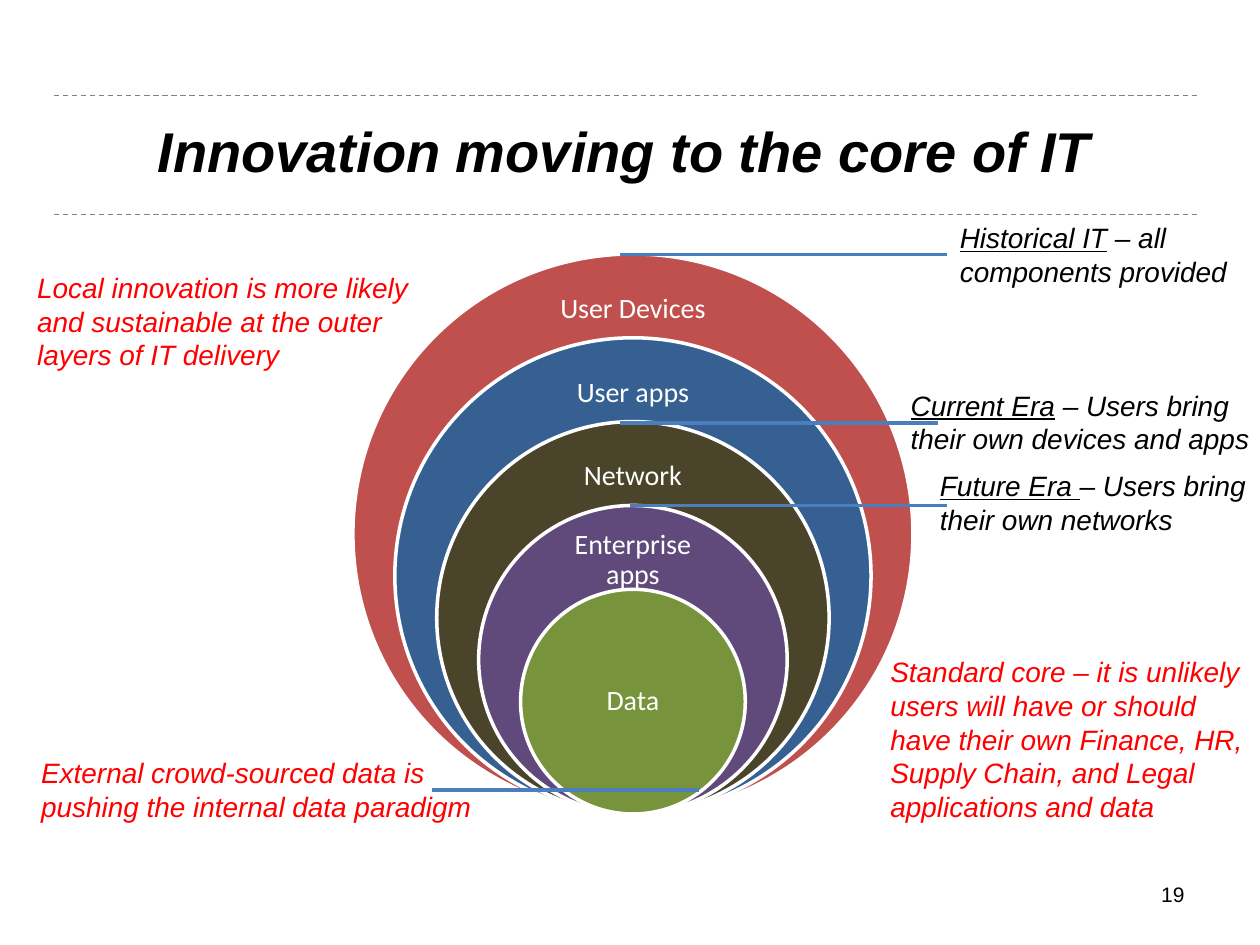
from lxml import etree
from pptx import Presentation
from pptx.dml.color import RGBColor
from pptx.enum.dml import MSO_LINE
from pptx.enum.shapes import MSO_CONNECTOR, MSO_SHAPE
from pptx.enum.text import MSO_ANCHOR, MSO_AUTO_SIZE, PP_ALIGN
from pptx.oxml.ns import qn
from pptx.util import Cm, Pt

BLACK = RGBColor(0x00, 0x00, 0x00)
WHITE = RGBColor(0xFF, 0xFF, 0xFF)
RED = RGBColor(0xFF, 0x00, 0x00)
GRAY = RGBColor(0x80, 0x80, 0x80)
POINTER_BLUE = RGBColor(0x4B, 0x7E, 0xBC)
DEVICES_RED = RGBColor(0xC0, 0x50, 0x4D)
APPS_BLUE = RGBColor(0x37, 0x60, 0x92)
NETWORK_BROWN = RGBColor(0x4A, 0x45, 0x2A)
ENTERPRISE_PURPLE = RGBColor(0x60, 0x4A, 0x7B)
DATA_GREEN = RGBColor(0x77, 0x93, 0x3C)


def format_font(font, color, **values):
    font.color.rgb = color
    for key, value in values.items():
        setattr(font, key, value)


def add_line(x1, y1, x2, y2, color, width):
    line = slide.shapes.add_connector(
        MSO_CONNECTOR.STRAIGHT, Cm(x1), Cm(y1), Cm(x2), Cm(y2))
    line.line.color.rgb = color
    line.line.width = Pt(width)
    etree.SubElement(line._element.spPr, qn("a:effectLst"))
    return line


prs = Presentation()
prs.slide_width, prs.slide_height = Cm(25.4), Cm(19.05)
slide = prs.slides.add_slide(prs.slide_layouts[5])

# Title between two dashed rules
for rule_y in (1.93, 4.32):
    rule = add_line(1.09, rule_y, 24.13, rule_y, GRAY, 0.75)
    rule.line.dash_style = MSO_LINE.DASH

title = slide.shapes.title
title_box = {"left": Cm(1.09), "top": Cm(2.13), "width": Cm(23.01), "height": Cm(1.8)}
for key, value in title_box.items():
    setattr(title, key, value)
title.text_frame.text = "Innovation moving to the core of IT"
title.text_frame.vertical_anchor = MSO_ANCHOR.MIDDLE
title.text_frame.paragraphs[0].alignment = PP_ALIGN.CENTER
format_font(title.text_frame.paragraphs[0].font, BLACK,
            name="Arial", size=Pt(32), bold=True, italic=True)

# Nested layers, all resting on the same bottom point
CENTER_X, BOTTOM = 12.76, 16.41
OUTER, STEP = 11.29, 1.69
layers = [  # label, fill, label width, label offset, label height
    ("User Devices", DEVICES_RED, 4.24, 0.56, 1.11),
    ("User apps", APPS_BLUE, 4.14, 0.56, 1.11),
    ("Network", NETWORK_BROWN, 4.09, 0.56, 1.11),
    ("Enterprise apps", ENTERPRISE_PURPLE, 3.35, 0.56, 1.11),
    ("Data", DATA_GREEN, 3.2, 1.13, 2.26),
]
for i, (name, fill, label_width, offset, label_height) in enumerate(layers):
    diameter = OUTER - i * STEP
    top = BOTTOM - diameter
    layer = slide.shapes.add_shape(
        MSO_SHAPE.OVAL, Cm(CENTER_X - diameter / 2), Cm(top), Cm(diameter), Cm(diameter))
    layer.shadow.inherit = False
    layer.fill.solid()
    layer.fill.fore_color.rgb = fill
    layer.line.color.rgb = WHITE
    layer.line.width = Pt(2)

    label = slide.shapes.add_textbox(
        Cm(CENTER_X - label_width / 2), Cm(top + offset), Cm(label_width), Cm(label_height))
    frame = label.text_frame
    frame.word_wrap = True
    frame.vertical_anchor = MSO_ANCHOR.MIDDLE
    for side in ("left", "top", "right", "bottom"):
        setattr(frame, f"margin_{side}", Cm(0.3))
    frame.text = name
    paragraph = frame.paragraphs[0]
    paragraph.alignment = PP_ALIGN.CENTER
    paragraph.line_spacing = 0.9
    format_font(paragraph.font, WHITE, name="Calibri", size=Pt(16))

# Pointers from the layers to the notes
historical_pointer = add_line(12.5, 5.13, 19.1, 5.13, POINTER_BLUE, 2.25)
for x1, y, x2 in ((12.5, 8.53, 18.9), (12.7, 10.19, 19.1), (8.71, 15.93, 14.1)):
    add_line(x1, y, x2, y, POINTER_BLUE, 2.25)

# Notes: left, top, width, height, wrap, colour, underlined lead, lines
notes = [
    (19.1, 4.32, 6.12, 1.62, False, BLACK, "Historical IT",
     [" – all", "components provided"]),
    (18.11, 7.7, 7.42, 1.62, False, BLACK, "Current Era",
     [" – Users bring", "their own devices and apps"]),
    (18.7, 9.32, 6.91, 1.62, False, BLACK, "Future Era ",
     ["– Users bring", "their own networks"]),
    (17.7, 13.08, 7.7, 3.68, True, RED, "",
     ["Standard core – it is unlikely",
      "users will have or should have their own Finance, HR, Supply Chain, and Legal",
      "applications and data"]),
    (0.5, 5.33, 8.23, 2.31, False, RED, "",
     ["Local innovation is more likely", "and sustainable at the outer",
      "layers of IT delivery"]),
    (0.58, 15.11, 9.3, 1.62, False, RED, "",
     ["External crowd-sourced data is", "pushing the internal data paradigm"]),
]
for left, top, width, height, wrap, color, lead, lines in notes:
    note = slide.shapes.add_textbox(Cm(left), Cm(top), Cm(width), Cm(height))
    frame = note.text_frame
    frame.word_wrap = wrap
    frame.auto_size = MSO_AUTO_SIZE.SHAPE_TO_FIT_TEXT
    for i, text in enumerate(lines):
        paragraph = frame.add_paragraph() if i else frame.paragraphs[0]
        format_font(paragraph.font, color, name="Arial", size=Pt(16), italic=True)
        parts = [(lead, True), (text, False)] if lead and i == 0 else [(text, False)]
        for part, underlined in parts:
            run = paragraph.add_run()
            run.text = part
            format_font(run.font, color, name="Arial", size=Pt(16),
                        italic=True, underline=underlined)
    if lead == "Historical IT":
        historical_pointer.end_connect(note, 1)

# Slide number
page_number = slide.shapes.add_textbox(Cm(18.21), Cm(17.65), Cm(5.92), Cm(1.02))
page_number.text_frame.word_wrap = True
page_number.text_frame.text = "19"
page_number.text_frame.paragraphs[0].alignment = PP_ALIGN.RIGHT
format_font(page_number.text_frame.paragraphs[0].font, BLACK, name="Arial", size=Pt(12))

prs.save("out.pptx")
